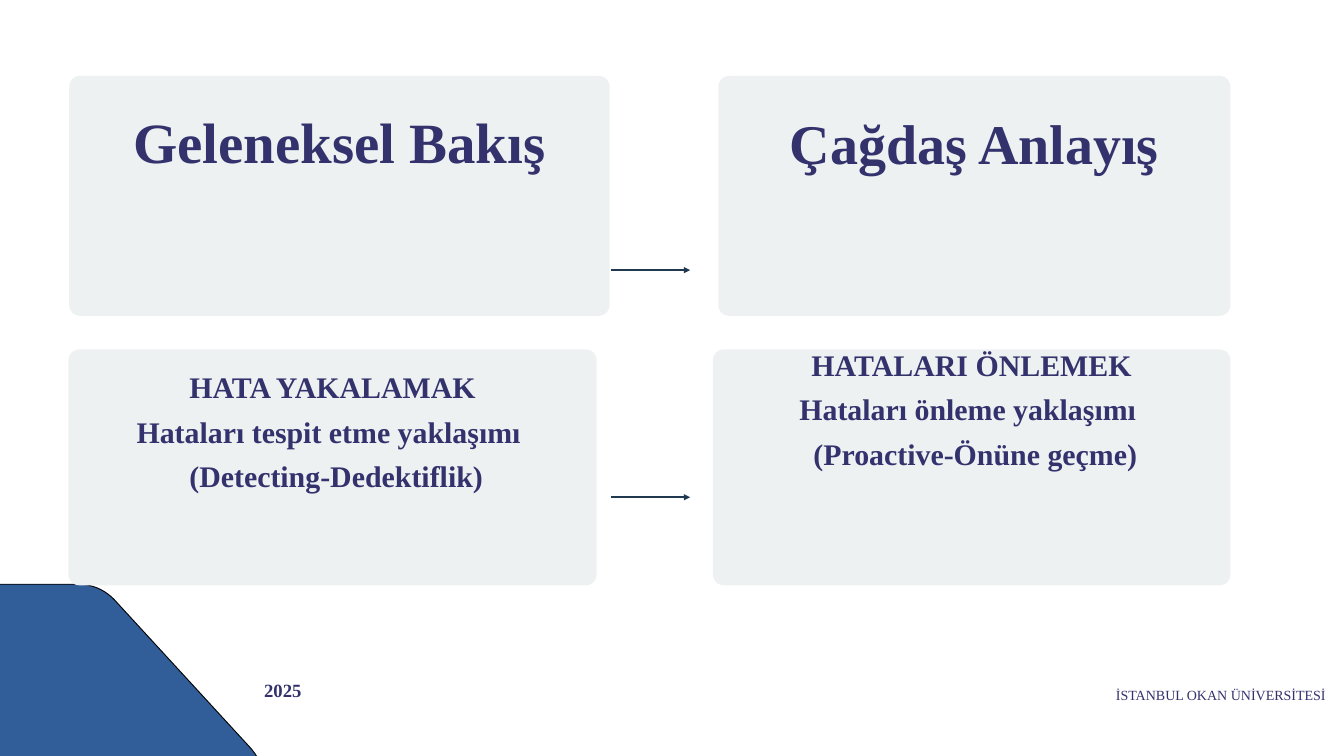
from lxml import etree
from pptx import Presentation
from pptx.dml.color import RGBColor
from pptx.enum import shapes, text
from pptx.oxml.ns import qn
from pptx.util import Pt

NAVY = RGBColor(0x33, 0x32, 0x6D)
PANEL = RGBColor(0xED, 0xF1, 0xF2)
BLUE = RGBColor(0x31, 0x5D, 0x98)
ARROW = RGBColor(0x20, 0x38, 0x50)
BLACK = RGBColor(0, 0, 0)
FONT = "Times New Roman"
CORNER_RADIUS = 11.5
CURVE_STEPS = 10

HEADING_TOP, HEADING_HEIGHT = 81.4, 257
DETAIL_TOP, DETAIL_HEIGHT = 374.4, 252.7

# box, gap from card top to text, lines, font size, line spacing
CARDS = [
    ((74.2, HEADING_TOP, 578.9, HEADING_HEIGHT), 15.3,
     ["Geleneksel Bakış"], 61, 90.3),
    ((73.4, DETAIL_TOP, 565.9, DETAIL_HEIGHT), 12,
     ["HATA YAKALAMAK", "Hataları tespit etme yaklaşımı ",
      " (Detecting-Dedektiflik)"], 32, 47.4),
    ((769.7, HEADING_TOP, 548.6, HEADING_HEIGHT), 18.5,
     ["Çağdaş Anlayış"], 60, 88.8),
    ((763.9, DETAIL_TOP, 554.4, DETAIL_HEIGHT), -11.7,
     ["HATALARI ÖNLEMEK", "Hataları önleme yaklaşımı ",
      " (Proactive-Önüne geçme)"], 32, 47.4),
]

# Each rounded corner: start, two control points, end, relative to the box
CORNER_BOX = (-121, 626)
CORNER_CURVES = [
    [(397, 237), (408, 217), (405, 193), (390, 176)],
    [(243, 16), (233, 6), (220, 0), (205, 0)],
    [(51, 0), (23, 0), (0, 23), (0, 52)],
    [(0, 256), (0, 267), (3, 277), (9, 286)],
    [(58, 355), (68, 368), (83, 376), (100, 376)],
    [(287, 376), (305, 376), (322, 366), (331, 350)],
]


def add_text(slide, box, lines, align, size, spacing, bold=True):
    tf = slide.shapes.add_textbox(*map(Pt, box)).text_frame
    frame_format = dict(word_wrap=True, margin_left=0, margin_right=0,
                        margin_top=0, margin_bottom=0)
    for name, value in frame_format.items():
        setattr(tf, name, value)
    for i, line in enumerate(lines):
        p = tf.paragraphs[0] if i == 0 else tf.add_paragraph()
        p.alignment = align
        p.line_spacing = Pt(spacing)
        r = p.add_run()
        r.text = line
        for name, value in dict(name=FONT, size=Pt(size), bold=bold).items():
            setattr(r.font, name, value)
        r.font.color.rgb = NAVY


def add_card(slide, box, text_gap, lines, size, spacing):
    left, top, width, height = box
    sp = slide.shapes.add_shape(
        shapes.MSO_SHAPE.ROUNDED_RECTANGLE, *map(Pt, box))
    sp.adjustments[0] = CORNER_RADIUS / min(width, height)
    sp.shadow.inherit = False
    sp.fill.solid()
    sp.fill.fore_color.rgb = PANEL
    sp.line.fill.background()
    text_box = (left, top + text_gap, width, spacing * len(lines))
    add_text(slide, text_box, lines, text.PP_ALIGN.CENTER, size, spacing)


def curve_points(curve):
    """Sample a cubic Bezier curve, both ends included."""
    for step in range(CURVE_STEPS + 1):
        t = step / CURVE_STEPS
        weights = ((1 - t) ** 3, 3 * t * (1 - t) ** 2,
                   3 * t ** 2 * (1 - t), t ** 3)
        yield tuple(sum(w * point[axis] for w, point in zip(weights, curve))
                    for axis in (0, 1))


def add_corner(slide, box):
    left, top = box
    points = [(Pt(left + x), Pt(top + y))
              for curve in CORNER_CURVES for x, y in curve_points(curve)]
    builder = slide.shapes.build_freeform(*points[0])
    builder.add_line_segments(points[1:], close=True)
    sp = builder.convert_to_shape()
    sp.shadow.inherit = False
    sp.fill.solid()
    sp.fill.fore_color.rgb = BLUE
    sp.line.color.rgb = BLACK
    sp.line.width = Pt(1)


def add_arrow(slide, left, y, length):
    arrow = slide.shapes.add_connector(
        shapes.MSO_CONNECTOR.STRAIGHT, Pt(left), Pt(y), Pt(left + length), Pt(y))
    arrow.line.color.rgb = ARROW
    arrow.line.width = Pt(2.25)
    etree.SubElement(arrow.line._get_or_add_ln(), qn("a:tailEnd"), type="triangle")
    etree.SubElement(arrow._element.spPr, qn("a:effectLst"))


def add_footer(slide):
    add_text(slide, (283, 722.9, 237.6, 29.5), ["2025"],
             text.PP_ALIGN.LEFT, 20, 28)
    add_text(slide, (1078.6, 733, 345.6, 62.6), ["İSTANBUL OKAN ÜNİVERSİTESİ "],
             text.PP_ALIGN.RIGHT, 15, 21, bold=False)


def main():
    prs = Presentation()
    prs.slide_width, prs.slide_height = Pt(1440), Pt(810)
    slide = prs.slides.add_slide(prs.slide_layouts.get_by_name("Blank"))
    add_corner(slide, CORNER_BOX)
    for card in CARDS:
        add_card(slide, *card)
    for y in (289.4, 532.8):
        add_arrow(slide, 654.5, y, 85)
    add_footer(slide)
    prs.save("out.pptx")


if __name__ == "__main__":
    main()
